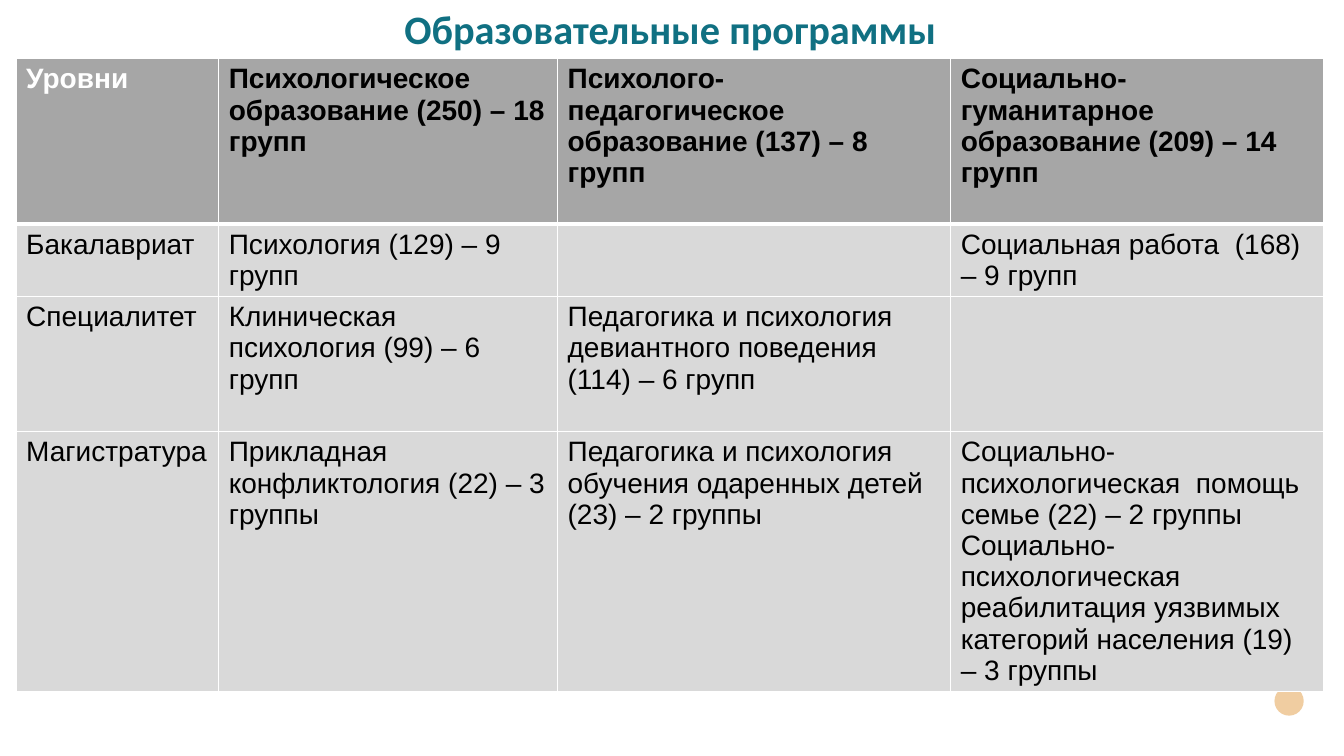
from lxml.etree import SubElement
from pptx import Presentation
from pptx.dml.color import RGBColor
from pptx.enum.shapes import MSO_SHAPE
from pptx.enum.text import MSO_ANCHOR, PP_ALIGN
from pptx.oxml.ns import qn
from pptx.util import Inches, Pt

WHITE = RGBColor(0xFF, 0xFF, 0xFF)
BLACK = RGBColor(0x00, 0x00, 0x00)
TEAL = RGBColor(0x10, 0x70, 0x82)
SAND = RGBColor(0xF0, 0xCD, 0xA1)
HEADER_GREY = RGBColor(0xA6, 0xA6, 0xA6)
BODY_GREY = RGBColor(0xD9, 0xD9, 0xD9)

COLUMN_WIDTHS = [2.01, 3.36, 3.9, 3.7]
ROW_HEIGHTS = [1.64, 0.71, 1.34, 2.58]
PROGRAMMES = [
    ["Уровни",
     "Психологическое образование (250) – 18 групп",
     "Психолого-педагогическое образование (137) – 8 групп",
     "Социально-гуманитарное  образование (209) – 14 групп"],
    ["Бакалавриат", "Психология (129) – 9 групп", "",
     "Социальная работа  (168) – 9 групп"],
    ["Специалитет", "Клиническая психология (99) – 6 групп",
     "Педагогика и психология девиантного поведения (114) – 6 групп", ""],
    ["Магистратура", "Прикладная конфликтология (22) – 3 группы",
     "Педагогика и психология обучения одаренных детей (23) – 2 группы",
     "Социально-психологическая  помощь семье (22) – 2 группы\n"
     "Социально- психологическая реабилитация уязвимых категорий "
     "населения (19) – 3 группы"],
]


class SlideBuilder:
    """Holds the slide and its style, and adds each kind of element."""

    title_font = "Calibri"
    table_font = "Arial"

    def __init__(self, presentation):
        self.slide = presentation.slides.add_slide(presentation.slide_layouts[5])

    def add_run(self, paragraph, text, font, size, color, bold):
        run = paragraph.add_run()
        run.text = text
        run.font.name = font
        run.font.size = Pt(size)
        run.font.bold = bold
        run.font.color.rgb = color

    def add_circle(self, left, top, diameter, color):
        circle = self.slide.shapes.add_shape(
            MSO_SHAPE.OVAL, Inches(left), Inches(top),
            Inches(diameter), Inches(diameter))
        circle.shadow.inherit = False
        circle.fill.solid()
        circle.fill.fore_color.rgb = color
        circle.line.fill.background()

    def set_title(self, text, left, top, width, height):
        title = self.slide.shapes.title
        title.left, title.top = Inches(left), Inches(top)
        title.width, title.height = Inches(width), Inches(height)
        title.text_frame.word_wrap = True
        title.text_frame.vertical_anchor = MSO_ANCHOR.MIDDLE
        paragraph = title.text_frame.paragraphs[0]
        paragraph.alignment = PP_ALIGN.CENTER
        paragraph.line_spacing = 0.9
        self.add_run(paragraph, text, self.title_font, 28.8, TEAL, True)

    def set_borders(self, cell, widths):
        properties = cell._tc.get_or_add_tcPr()
        for position, (side, width) in enumerate(widths.items()):
            line = properties.makeelement(qn(f"a:{side}"), {"w": str(Pt(width))})
            fill = SubElement(line, qn("a:solidFill"))
            SubElement(fill, qn("a:srgbClr"), val=str(WHITE))
            properties.insert(position, line)

    def fill_cell(self, cell, text, is_header, is_first_column, is_below_header):
        cell.fill.solid()
        cell.fill.fore_color.rgb = HEADER_GREY if is_header else BODY_GREY
        color = WHITE if is_header and is_first_column else BLACK
        for index, line in enumerate(text.split("\n")):
            frame = cell.text_frame
            paragraph = frame.add_paragraph() if index else frame.paragraphs[0]
            if line:
                self.add_run(paragraph, line, self.table_font, 20, color, is_header)
        self.set_borders(cell, {"lnL": 1, "lnR": 1,
                                "lnT": 3 if is_below_header else 1,
                                "lnB": 3 if is_header else 1})

    def add_table(self, rows, left, top, column_widths, row_heights):
        table = self.slide.shapes.add_table(
            len(rows), len(column_widths), Inches(left), Inches(top),
            Inches(sum(column_widths)), Inches(sum(row_heights))).table
        table.horz_banding = False
        for column, width in zip(table.columns, column_widths):
            column.width = Inches(width)
        for row_index, (texts, height) in enumerate(zip(rows, row_heights)):
            table.rows[row_index].height = Inches(height)
            for column_index, text in enumerate(texts):
                self.fill_cell(table.cell(row_index, column_index), text,
                               row_index == 0, column_index == 0, row_index == 1)


def main():
    presentation = Presentation()
    presentation.slide_width = Inches(13.33)
    presentation.slide_height = Inches(7.5)
    builder = SlideBuilder(presentation)
    builder.add_circle(12.64, 6.81, 0.29, SAND)
    builder.set_title("Образовательные программы", 0.33, 0.2, 12.64, 0.23)
    builder.add_table(PROGRAMMES, 0.16, 0.58, COLUMN_WIDTHS, ROW_HEIGHTS)
    presentation.save("out.pptx")


if __name__ == "__main__":
    main()
